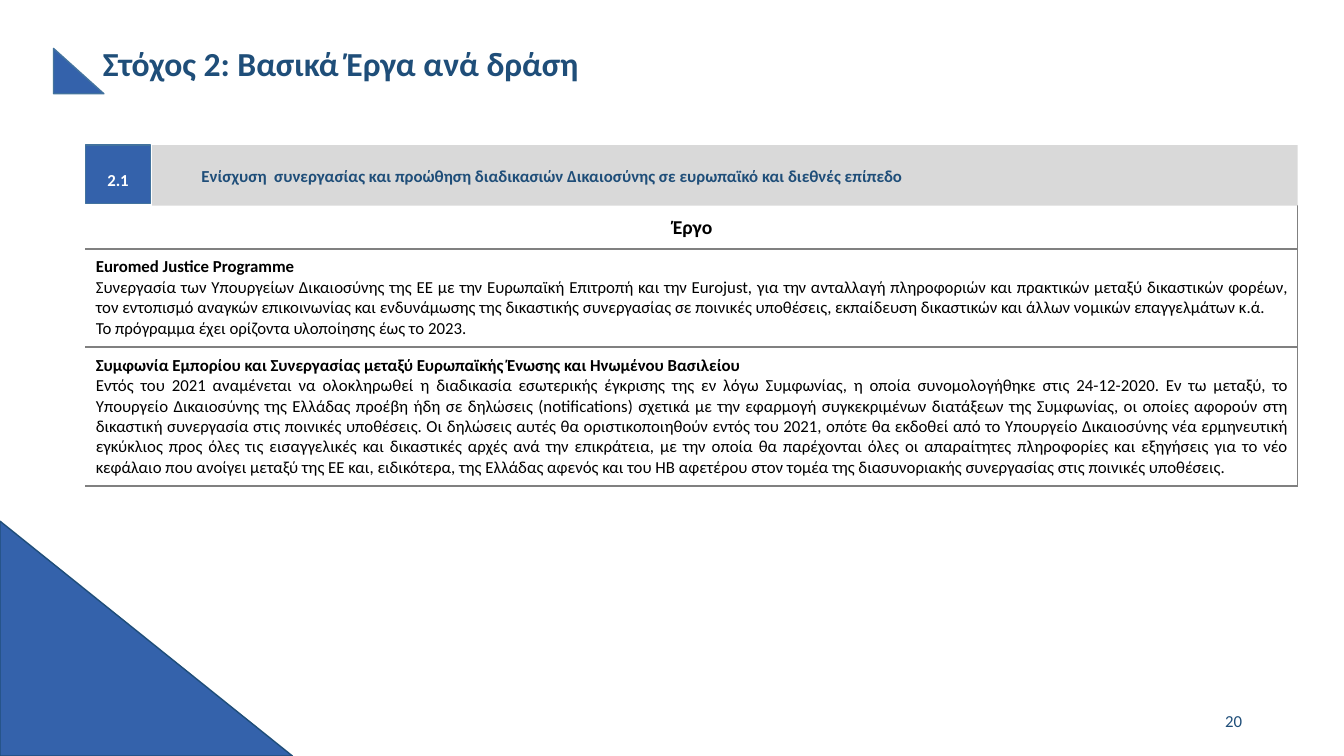
"""Build the slide on key projects per action for Goal 2."""
from lxml import etree
from pptx import Presentation
from pptx import util as u
from pptx.dml.color import RGBColor
from pptx.enum import shapes, text
from pptx.oxml.ns import qn

COLORS = {"blue": "3462AB", "navy": "1F4E79", "edge": "43739E", "band": "D9D9D9",
          "rule": "808080", "white": "FFFFFF", "black": "000000"}
FONT = "Calibri"
ALIGN = text.PP_ALIGN
SHAPE = shapes.MSO_SHAPE

PROJECTS = [
    ("Euromed Justice Programme",
     "Συνεργασία των Υπουργείων Δικαιοσύνης της ΕΕ με την Ευρωπαϊκή Επιτροπή και την Eurojust, "
     "για την ανταλλαγή πληροφοριών και πρακτικών μεταξύ δικαστικών φορέων, τον εντοπισμό αναγκών "
     "επικοινωνίας και ενδυνάμωσης της δικαστικής συνεργασίας σε ποινικές υποθέσεις, εκπαίδευση "
     "δικαστικών και άλλων νομικών επαγγελμάτων κ.ά.",
     "Το πρόγραμμα έχει ορίζοντα υλοποίησης έως το 2023."),
    ("Συμφωνία Εμπορίου και Συνεργασίας μεταξύ Ευρωπαϊκής Ένωσης και Ηνωμένου Βασιλείου",
     "Εντός του 2021 αναμένεται να ολοκληρωθεί η διαδικασία εσωτερικής έγκρισης της εν λόγω "
     "Συμφωνίας, η οποία συνομολογήθηκε στις 24-12-2020. Εν τω μεταξύ, το Υπουργείο Δικαιοσύνης "
     "της Ελλάδας προέβη ήδη σε δηλώσεις (notifications) σχετικά με την εφαρμογή συγκεκριμένων "
     "διατάξεων της Συμφωνίας, οι οποίες αφορούν στη δικαστική συνεργασία στις ποινικές υποθέσεις. "
     "Οι δηλώσεις αυτές θα οριστικοποιηθούν εντός του 2021, οπότε θα εκδοθεί από το Υπουργείο "
     "Δικαιοσύνης νέα ερμηνευτική εγκύκλιος προς όλες τις εισαγγελικές και δικαστικές αρχές ανά "
     "την επικράτεια, με την οποία θα παρέχονται όλες οι απαραίτητες πληροφορίες και εξηγήσεις για "
     "το νέο κεφάλαιο που ανοίγει μεταξύ της ΕΕ και, ειδικότερα, της Ελλάδας αφενός και του ΗΒ "
     "αφετέρου στον τομέα της διασυνοριακής συνεργασίας στις ποινικές υποθέσεις."),
]


def rgb(name):
    return RGBColor.from_string(COLORS[name])


def write(tf, *lines, size=12, color="black", bold=False, head=False,
          align=ALIGN.LEFT, spacing=1.0, after=0, indent=0):
    for i, line in enumerate(lines):
        p = tf.paragraphs[0] if i == 0 else tf.add_paragraph()
        p.alignment, p.line_spacing = align, spacing
        p.space_before, p.space_after = u.Pt(0), u.Pt(after)
        if indent:
            p._p.get_or_add_pPr().set("marL", str(u.Inches(indent)))
        r = p.add_run()
        r.text = line
        r.font.name, r.font.size = FONT, u.Pt(size)
        r.font.bold = bold or (head and i == 0)
        r.font.color.rgb = rgb(color)


class Deck:
    """Places elements by percentages of the slide's width and height."""

    def __init__(self, width, height):
        self.prs = Presentation()
        self.prs.slide_width, self.prs.slide_height = u.Inches(width), u.Inches(height)
        self.s = self.prs.slides.add_slide(self.prs.slide_layouts[5])

    def x(self, share):
        return int(self.prs.slide_width * share / 100)

    def y(self, share):
        return int(self.prs.slide_height * share / 100)

    def box(self, left, top, width, height):
        return self.x(left), self.y(top), self.x(width), self.y(height)

    def frame(self, sp, inset=None):
        tf = sp.text_frame
        tf.word_wrap, tf.auto_size = True, text.MSO_AUTO_SIZE.NONE
        tf.vertical_anchor = text.MSO_ANCHOR.MIDDLE
        if inset is not None:
            tf.margin_left = tf.margin_right = u.Inches(inset)
            tf.margin_top = tf.margin_bottom = u.Inches(inset)
        return tf

    def title(self, line, *place, **style):
        sp = self.s.shapes.title
        sp.left, sp.top, sp.width, sp.height = self.box(*place)
        write(self.frame(sp), line, **style)

    def label(self, line, *place, **style):
        sp = self.s.shapes.add_textbox(*self.box(*place))
        write(self.frame(sp), line, **style)

    def shape(self, kind, *place, fill="blue", line=None, label=None, inset=None, **style):
        sp = self.s.shapes.add_shape(kind, *self.box(*place))
        sp.shadow.inherit = False
        sp.fill.solid()
        sp.fill.fore_color.rgb = rgb(fill)
        if line:
            sp.line.color.rgb, sp.line.width = rgb(line), u.Pt(1)
        else:
            sp.line.fill.background()
        if label:
            write(self.frame(sp, inset), label, **style)

    def border(self, cell, side, points):
        ln = etree.SubElement(cell._tc.get_or_add_tcPr(), qn(f"a:ln{side}"), w=str(u.Pt(points)))
        fill = etree.SubElement(ln, qn("a:solidFill"))
        etree.SubElement(fill, qn("a:srgbClr"), val=COLORS["rule"])

    def table(self, header, projects, left, top, width, heights):
        sp = self.s.shapes.add_table(len(heights), 1, *self.box(left, top, width, sum(heights)))
        tbl = sp.table
        tbl.first_row = tbl.horz_banding = False
        last = len(projects)
        for i, height in enumerate(heights):
            tbl.rows[i].height = self.y(height)
            cell = tbl.cell(i, 0)
            cell.vertical_anchor = text.MSO_ANCHOR.MIDDLE
            cell.margin_left = u.Inches(0.1)
            cell.margin_right = cell.margin_top = cell.margin_bottom = u.Inches(0.08)
            self.border(cell, "R", 1)
            if i:
                self.border(cell, "T", 2.25)
                write(cell.text_frame, *projects[i - 1], head=True, align=ALIGN.JUSTIFY)
            else:
                write(cell.text_frame, header, size=14, bold=True, align=ALIGN.CENTER)
            self.border(cell, "B", 1 if i == last else 2.25)
            cell.fill.background()


def main():
    deck = Deck(13.33, 7.5)
    deck.shape(SHAPE.RIGHT_TRIANGLE, 0, 68.93, 21.76, 31.07, line="navy")
    deck.label("20", 70.67, 92.67, 22.5, 5.33, color="navy", align=ALIGN.RIGHT)
    deck.table("Έργο", PROJECTS, 6.38, 27.2, 90.17, [5.73, 12.93, 18.13])
    deck.title("Στόχος 2: Βασικά Έργα ανά δράση", 6.9, 4.67, 86.27, 8.13,
               size=24, color="navy", bold=True, spacing=0.9, after=6)
    deck.shape(SHAPE.RIGHT_TRIANGLE, 3.98, 6.4, 3.75, 6, line="edge")
    deck.shape(SHAPE.RECTANGLE, 11.33, 19.2, 85.22, 8, fill="band",
               label="Ενίσχυση  συνεργασίας και προώθηση διαδικασιών Δικαιοσύνης "
                     "σε ευρωπαϊκό και διεθνές επίπεδο",
               color="navy", bold=True, after=6, indent=0.39)
    deck.shape(SHAPE.RECTANGLE, 6.38, 19.2, 4.8, 7.73, line="edge", label="2.1", inset=0,
               color="white", bold=True, align=ALIGN.CENTER, spacing=1.5)
    deck.prs.save("out.pptx")


if __name__ == "__main__":
    main()
